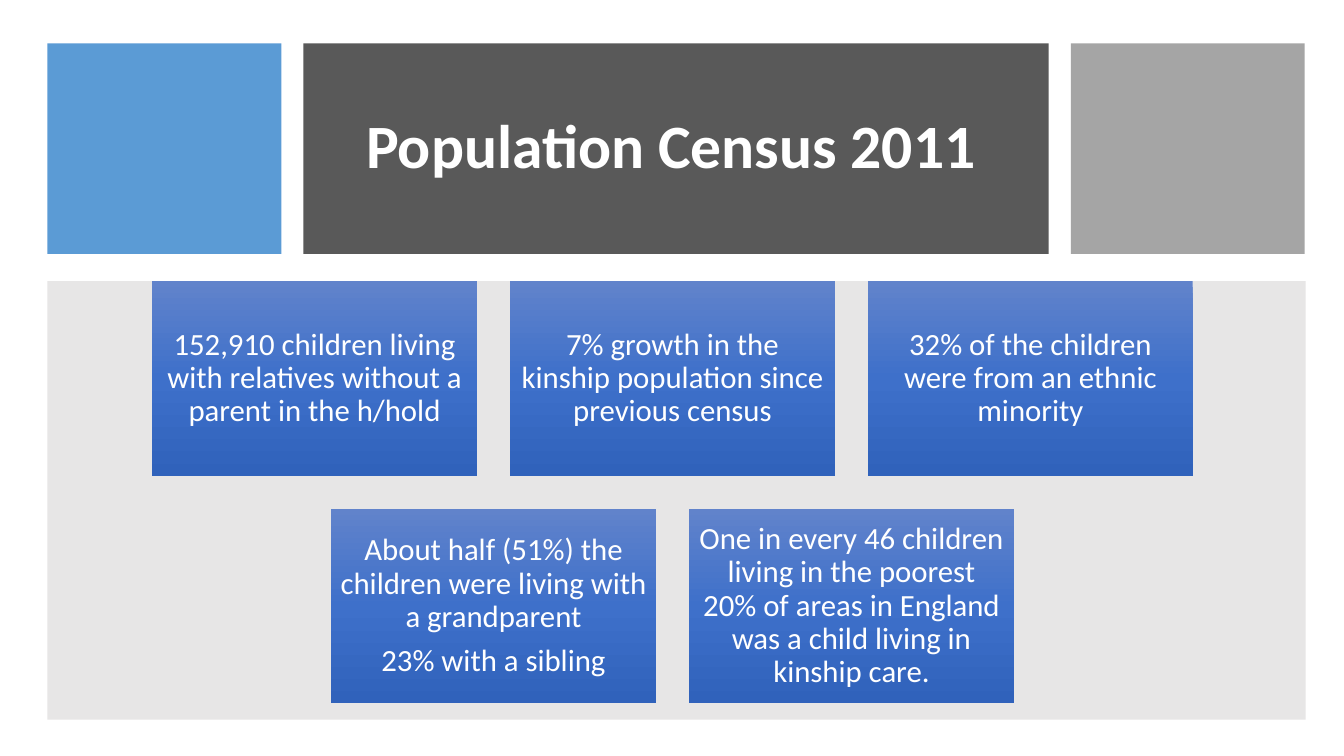
from lxml import etree
from pptx import Presentation
from pptx import util as u
from pptx.dml.color import RGBColor
from pptx.enum import shapes, text
from pptx.oxml.ns import qn

TITLE = "Population Census 2011"
PANELS = [  # left, top, width, height, colour
    (3.01, 0.43, 7.39, 2.09, "595959"),
    (0.47, 0.43, 2.32, 2.09, "5B9BD5"),
    (10.62, 0.43, 2.32, 2.09, "A5A5A5"),
    (0.47, 2.79, 12.48, 4.35, "E7E6E6"),
]
CARD_ROWS = [  # each card is a list of paragraphs
    [
        ["152,910 children living with relatives without a parent in the h/hold"],
        ["7% growth in the kinship population since previous census"],
        ["32% of the children were from an ethnic minority"],
    ],
    [
        ["About half (51%) the children were living with a grandparent",
         "23% with a sibling"],
        ["One in every 46 children living in the poorest 20% of areas in England "
         "was a child living in kinship care."],
    ],
]
CARD_GRADIENT = [(0, "6183CB"), (50, "3E70CA"), (100, "3062BB")]
CARD_WIDTH, CARD_HEIGHT, GAP = 3.22, 1.93, 0.33
CARDS_TOP, CARDS_CENTRE = 2.79, 6.67
INSET = 0.09


def rgb(value):
    return RGBColor.from_string(value)


def add_box(page, left, top, width, height):
    box = page.shapes.add_shape(
        shapes.MSO_SHAPE.RECTANGLE, *map(u.Inches, (left, top, width, height)))
    box.shadow.inherit = False
    box.line.fill.background()
    return box


def fill_gradient(box, stops):
    """Fill from top to bottom with any number of stops."""
    box.fill.gradient()
    gradient = box.fill._xPr.find(qn("a:gradFill"))
    for child in list(gradient):
        gradient.remove(child)
    stop_list = etree.SubElement(gradient, qn("a:gsLst"))
    for percent, colour in stops:
        stop = etree.SubElement(stop_list, qn("a:gs"), pos=str(percent * 1000))
        etree.SubElement(stop, qn("a:srgbClr"), val=colour)
    etree.SubElement(gradient, qn("a:lin"), ang="5400000", scaled="0")


def write(box, paragraphs, size, bold=False, after=0, inset=0.1):
    frame = box.text_frame
    frame.word_wrap = True
    frame.auto_size = text.MSO_AUTO_SIZE.NONE
    frame.vertical_anchor = text.MSO_ANCHOR.MIDDLE
    frame.margin_left = frame.margin_right = u.Inches(inset)
    frame.margin_top = frame.margin_bottom = u.Inches(min(inset, INSET))
    for index, line in enumerate(paragraphs):
        para = frame.add_paragraph() if index else frame.paragraphs[0]
        para.alignment = text.PP_ALIGN.CENTER
        para.line_spacing = 0.9
        para.space_after = u.Pt(after)
        span = para.add_run()
        span.text = line
        span.font.name = "Calibri"
        span.font.size = u.Pt(size)
        span.font.bold = bold
        span.font.color.rgb = rgb("FFFFFF")


deck = Presentation()
deck.slide_width, deck.slide_height = u.Inches(13.33), u.Inches(7.5)
page = deck.slides.add_slide(deck.slide_layouts[5])

# Background panels
for *place, colour in PANELS:
    panel = add_box(page, *place)
    panel.fill.solid()
    panel.fill.fore_color.rgb = rgb(colour)

# Title, raised above the panels
title = page.shapes.title
title.left, title.top = u.Inches(3.53), u.Inches(0.75)
title.width, title.height = u.Inches(6.26), u.Inches(1.45)
write(title, [TITLE], 44, bold=True)
page.shapes._spTree.append(title._element)

# Cards, each row centred
for row, cards in enumerate(CARD_ROWS):
    row_width = len(cards) * (CARD_WIDTH + GAP) - GAP
    top = CARDS_TOP + row * (CARD_HEIGHT + GAP)
    for column, paragraphs in enumerate(cards):
        left = CARDS_CENTRE - row_width / 2 + column * (CARD_WIDTH + GAP)
        card = add_box(page, left, top, CARD_WIDTH, CARD_HEIGHT)
        fill_gradient(card, CARD_GRADIENT)
        write(card, paragraphs, 22, after=7.7, inset=INSET)

deck.save("out.pptx")
